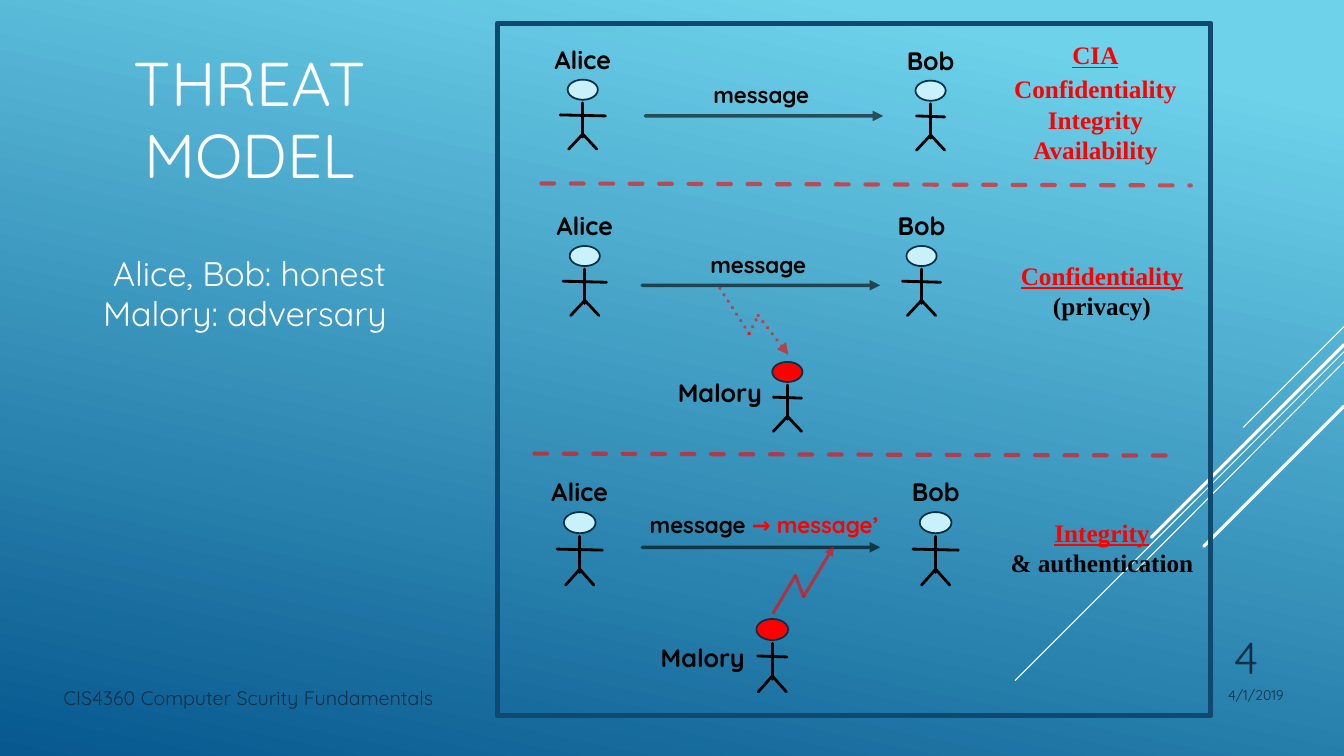
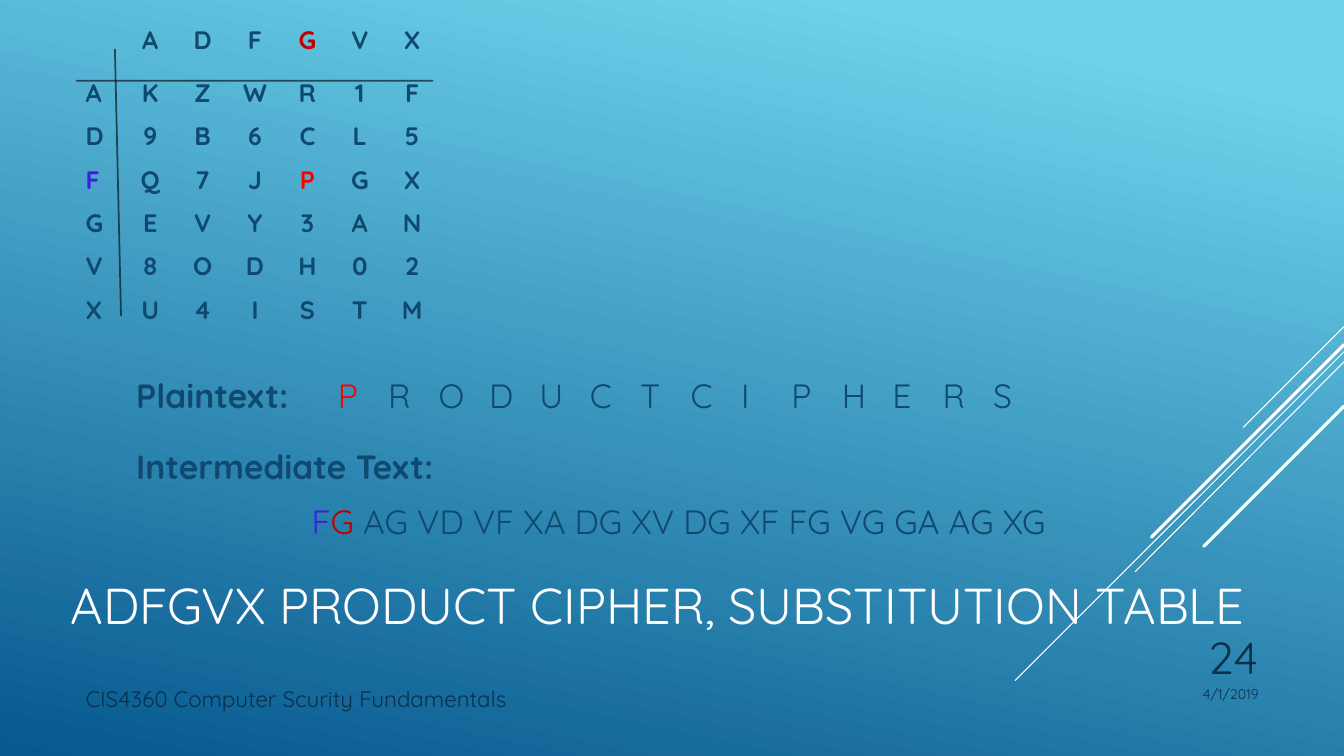
from dataclasses import dataclass, field
from typing import Any, NamedTuple

from lxml.etree import SubElement
from pptx import Presentation
from pptx.dml.color import RGBColor
from pptx.enum.dml import MSO_LINE as Dash
from pptx.enum.shapes import MSO_CONNECTOR as Conn, MSO_SHAPE as Shape
from pptx.enum.text import MSO_ANCHOR as Anchor, MSO_AUTO_SIZE as Fit, PP_ALIGN as Align
from pptx.oxml.ns import qn
from pptx.util import Inches, Pt

Point = tuple[float, float]


@dataclass(frozen=True)
class Theme:
    font: str = "Quicksand"
    serif: str = "Times New Roman"
    white: str = "FFFFFF"
    black: str = "000000"
    navy: str = "0F496F"
    foot: str = "0A304A"
    edge: str = "043148"
    pale: str = "C8F1FB"
    red: str = "FF0000"
    wine: str = "C00000"
    blue: str = "401AE4"
    sky: str = "6ED2EB"
    sea: str = "06588E"
    head: float = 44.1
    title: float = 36
    number: float = 32
    sub: float = 24.3
    body: float = 24
    label: float = 18
    small: float = 16
    date: float = 10


T = Theme()


class Run(NamedTuple):
    text: str
    look: dict[str, Any] = {}


class Para(NamedTuple):
    runs: tuple[Run, ...]
    look: dict[str, Any] = {}
    left: float = 0
    tabs: tuple[float, ...] = ()


class Box(NamedTuple):
    x: float
    y: float
    w: float
    h: float


class Foot(NamedTuple):
    number: str
    date: Box
    course: Box
    size: float


class Note(NamedTuple):
    box: Box
    paras: tuple[Para, ...]
    look: dict[str, Any]


@dataclass(frozen=True)
class Person:
    name: str
    x: float
    y: float
    reach: float
    scale: float = 1
    fill: str = T.pale
    tag: Point = (0, -0.4)


@dataclass(frozen=True)
class Stroke:
    color: str = T.black
    width: float = 2
    alpha: int = 100
    dash: Any = None
    arrow: bool = False


@dataclass(frozen=True)
class Scene:
    """One exchange between Alice and Bob."""
    arrow: Point
    say: Note
    side: Note
    people: tuple[Person, ...]
    zigzag: tuple[Point, ...] = ()
    stroke: Stroke = field(default_factory=Stroke)


def one(text: str, **look: Any) -> Para:
    return Para((Run(text, look),))


def place(shape, box: Box) -> None:
    for key, val in zip(("left", "top", "width", "height"), box):
        setattr(shape, key, Inches(val))


def style(font, look: dict[str, Any]) -> None:
    for key, val in look.items():
        if key == "color":
            font.color.rgb = RGBColor.from_string(val)
        else:
            setattr(font, key, Pt(val) if key == "size" else val)


def write(frame, paras, align=Align.LEFT, anchor=Anchor.TOP, **look: Any) -> None:
    for key, val in dict(word_wrap=True, auto_size=Fit.NONE, vertical_anchor=anchor).items():
        setattr(frame, key, val)
    base = dict(name=T.font, size=T.label, color=T.navy, bold=False) | look
    for i, para in enumerate(paras):
        par = frame.paragraphs[0] if i == 0 else frame.add_paragraph()
        space = dict(alignment=align, space_before=Pt(0), space_after=Pt(0))
        for key, val in (space | para.look).items():
            setattr(par, key, val)
        props = par._p.get_or_add_pPr()
        props.set("marL", str(Inches(para.left)))
        props.set("indent", "0")
        SubElement(props, qn("a:buNone"))
        if para.tabs:
            stops = SubElement(props, qn("a:tabLst"))
            for pos in para.tabs:
                SubElement(stops, qn("a:tab"), pos=str(Inches(pos)), algn="ctr")
        for text, extra in para.runs:
            run = par.add_run()
            run.text = text
            style(run.font, base | extra)


def label(slide, box: Box, paras, **look: Any) -> None:
    write(slide.shapes.add_textbox(*map(Inches, box)).text_frame, paras, **look)


def draw(slide, start: Point, end: Point, stroke: Stroke):
    line = slide.shapes.add_connector(Conn.STRAIGHT, *map(Inches, start + end))
    line.line.width = Pt(stroke.width)
    line.line.color.rgb = RGBColor.from_string(stroke.color)
    if stroke.dash:
        line.line.dash_style = stroke.dash
    props = line.element.spPr
    edge = props.find(qn("a:ln"))
    edge.set("cap", "rnd")
    if stroke.alpha < 100:
        color = edge.find(".//" + qn("a:srgbClr"))
        SubElement(color, qn("a:alpha"), val=str(stroke.alpha * 1000))
    if stroke.arrow:
        SubElement(edge, qn("a:tailEnd"), type="triangle")
    SubElement(props, qn("a:effectLst"))
    return line


def solid(slide, kind, box: Box, fill: str | None, edge: str, width: float) -> None:
    shape = slide.shapes.add_shape(kind, *map(Inches, box))
    shape.shadow.inherit = False
    if fill:
        shape.fill.solid()
        shape.fill.fore_color.rgb = RGBColor.from_string(fill)
    else:
        shape.fill.background()
    shape.line.color.rgb = RGBColor.from_string(edge)
    shape.line.width = Pt(width)


RAYS = (
    ((13.33, 3.24), (12.33, 4.24), 0.75),
    ((13.33, 3.49), (10.07, 6.75), 0.75),
    ((13.33, 3.59), (11.26, 5.67), 0.75),
    ((13.33, 3.42), (11.42, 5.33), 2.25),
    ((13.33, 4.03), (11.94, 5.42), 2.25),
)


def dress(master, slide) -> None:
    """Give the master its gradient and its rays, which are drawn on the slide first."""
    fill = master.background.fill
    fill.gradient()
    fill.gradient_angle = 258
    for stop, color, pos in zip(fill.gradient_stops, (T.sky, T.sea), (0.1, 1)):
        stop.color.rgb = RGBColor.from_string(color)
        stop.position = pos
    for i, (start, end, width) in enumerate(RAYS):
        ray = draw(slide, start, end, Stroke(T.white, width)).element
        ray.nvCxnSpPr.cNvPr.set("id", str(50 + i))
        master.shapes.element.append(ray)


def footer(slide, foot: Foot) -> None:
    look = dict(color=T.foot)
    label(slide, foot.date, [one("4/1/2019")], align=Align.RIGHT, size=T.date, **look)
    label(slide, foot.course, [one("CIS4360 Computer Scurity Fundamentals")],
          size=foot.size, **look)
    label(slide, Box(11.33, 6.1, 1.25, 0.73), [one(foot.number)], align=Align.RIGHT,
          anchor=Anchor.BOTTOM, size=T.number, **look)


def figure(slide, who: Person) -> None:
    x, y, k = who.x, who.y, who.scale
    solid(slide, Shape.OVAL, Box(x - 0.15 * k, y, 0.3 * k, 0.2 * k), who.fill, T.edge, 1.25)
    hip = (x, y + 0.54 * k)
    arm = y + 0.35 * k
    limbs = [((x, y + 0.23 * k), (x, y + 0.57 * k)),
             ((x - who.reach / 2, arm), (x + who.reach / 2, arm + 0.01))]
    limbs += [(hip, (x + side * 0.14, y + 0.69 * k)) for side in (-1, 1)]
    for start, end in limbs:
        draw(slide, start, end, Stroke())
    dx, dy = who.tag
    label(slide, Box(x + dx - 0.7, y + dy, 1.4, 0.4), [one(who.name)],
          align=Align.CENTER, color=T.black, bold=True)


SAY = dict(align=Align.CENTER, size=T.small, color=T.black, bold=True)
SIDE = dict(align=Align.CENTER, name=T.serif, color=T.red, bold=True)
MESSAGE = one("message")
SCENES = (
    Scene((6.4, 1.15), Note(Box(6.84, 0.76, 1.42, 0.37), (MESSAGE,), SAY),
          Note(Box(9.78, 0.34, 2.17, 1.35), (
              Para((Run("CIA", dict(underline=True)),), dict(space_after=Pt(3))),
              one("Confidentiality"), one("Integrity"), one("Availability")), SIDE),
          (Person("Alice", 5.78, 0.79, 0.45), Person("Bob", 9.23, 0.8, 0.28))),
    Scene((6.37, 2.83), Note(Box(6.81, 2.44, 1.42, 0.37), (MESSAGE,), SAY),
          Note(Box(9.91, 2.53, 2.04, 0.71), (
              one("Confidentiality", underline=True), one("(privacy)", color=T.black)), SIDE),
          (Person("Alice", 5.8, 2.44, 0.43), Person("Bob", 9.14, 2.44, 0.38),
           Person("Malory", 7.81, 3.59, 0.28, 1, T.red, (-0.67, 0.1))),
          ((7.14, 2.86), (7.43, 3.31), (7.52, 3.13), (7.82, 3.52)),
          Stroke(T.red, 2.75, 60, Dash.ROUND_DOT)),
    Scene((6.37, 5.43), Note(Box(6.17, 5.02, 2.82, 0.37), (
              Para((Run("message "), Run("→ message’", dict(color=T.red)))),), SAY),
          Note(Box(9.91, 5.08, 2.04, 0.71), (
              one("Integrity", underline=True), one("& authentication", color=T.black)), SIDE),
          (Person("Alice", 5.75, 5.08, 0.45, 1.05), Person("Bob", 9.28, 5.08, 0.45, 1.05),
           Person("Malory", 7.66, 6.14, 0.29, 1.05, T.red, (-0.69, 0.18))),
          ((7.67, 6.08), (7.89, 5.71), (7.97, 5.92), (8.27, 5.42)),
          Stroke(T.red, 2.25, 60)),
)


def act(slide, scene: Scene) -> None:
    for who in scene.people:
        figure(slide, who)
    x, y = scene.arrow
    draw(slide, (x, y), (x + 2.36, y), Stroke(T.black, 2.5, 60, arrow=True))
    for note in (scene.say, scene.side):
        label(slide, note.box, note.paras, **note.look)
    bends = scene.zigzag
    for i, (start, end) in enumerate(zip(bends, bends[1:])):
        kind = scene.stroke
        last = i == len(bends) - 2
        draw(slide, start, end, Stroke(kind.color, kind.width, kind.alpha, kind.dash, last))


def threat(slide) -> None:
    title, body = slide.shapes.title, slide.placeholders[1]
    place(title, Box(0.68, 0.4, 3.6, 1.6))
    place(body, Box(0.1, 2.4, 4.75, 1.05))
    look = dict(align=Align.CENTER, anchor=Anchor.MIDDLE, color=T.white)
    tight = dict(line_spacing=0.97)
    write(title.text_frame, [Para((Run("THREAT MODEL"),), tight)], size=T.head, **look)
    write(body.text_frame, [Para((Run(text),), tight) for text in
                            ("Alice, Bob: honest", "Malory: adversary ")],
          size=T.sub, **look)
    footer(slide, Foot("4", Box(11.08, 6.76, 1.75, 0.4), Box(0.53, 6.76, 4.36, 0.4), 14))
    solid(slide, Shape.RECTANGLE, Box(4.93, 0.23, 7.08, 6.87), None, T.navy, 3.5)
    for scene in SCENES:
        act(slide, scene)
    for start, end in (((5.37, 1.82), (11.81, 1.84)), ((5.3, 4.5), (11.71, 4.52))):
        draw(slide, start, end, Stroke(T.red, 3, 60, Dash.DASH))


GRID = (" ADFGVX", "AKZWR1F", "D9B6CL5", "FQ7JPGX", "GEVY3AN", "V8ODH02", "XU4ISTM")
MARKS = {(0, 4): T.wine, (3, 0): T.blue, (3, 4): T.red}


def square(slide) -> None:
    size = len(GRID)
    table = slide.shapes.add_table(size, size, *map(Inches, (0.75, 0.09, 3.6, 3.2))).table
    table.first_row = table.horz_banding = False
    plain = "{2D5ABB26-0587-4C30-8999-92F81FD0307C}"
    table._tbl.tblPr.find(qn("a:tableStyleId")).text = plain
    for i in range(size):
        table.columns[i].width = Inches(0.52 if i else 0.48)
        table.rows[i].height = Inches(0.43 if i else 0.62)
    for r, row in enumerate(GRID):
        for c, sign in enumerate(row):
            cell = table.cell(r, c)
            cell.fill.background()
            cell.margin_top = cell.margin_bottom = cell.margin_right = 0
            cell.margin_left = 0 if c else Inches(0.1)
            cell.vertical_anchor = Anchor.MIDDLE
            write(cell.text_frame, [one(sign.strip())], Align.CENTER if c else Align.LEFT,
                  Anchor.MIDDLE, bold=True, color=MARKS.get((r, c), T.navy))
    for start, end in (((0.76, 0.8), (4.29, 0.8)), ((1.14, 0.49), (1.2, 3.13))):
        draw(slide, start, end, Stroke(T.black, 1.25, 60))


def cipher(slide) -> None:
    title, body = slide.shapes.title, slide.placeholders[1]
    place(title, Box(0.6, 5.17, 12.45, 1.66))
    write(title.text_frame, [one("ADFGVX PRODUCT CIPHER, SUBSTITUTION TABLE")],
          anchor=Anchor.MIDDLE, size=T.title, color=T.white)
    place(body, Box(1.25, 3.67, 10.25, 1.8))
    bold = dict(bold=True)
    rest = "".join("\t" + sign for sign in "RODUCTCIPHERS")
    write(body.text_frame, [
        Para((Run("Plaintext:\t", bold), Run("P", dict(color=T.red)), Run(rest)),
             tabs=tuple(round(2.47 + 0.56 * i, 2) for i in range(14))),
        Para((Run("Intermediate Text:", bold),), dict(space_before=Pt(22))),
        Para((Run("F", dict(color=T.blue)), Run("G ", dict(color=T.wine)),
              Run("AG VD VF XA DG XV DG XF FG VG GA AG XG")),
             dict(space_before=Pt(10)), left=1.74),
    ], size=T.body)
    footer(slide, Foot("24", Box(10.83, 6.75, 1.75, 0.4), Box(0.75, 6.75, 8.25, 0.4), T.small))
    square(slide)


def main() -> None:
    deck = Presentation()
    deck.slide_width, deck.slide_height = Inches(13.33), Inches(7.5)
    layout = deck.slide_layouts[1]
    first, second = (deck.slides.add_slide(layout) for _ in range(2))
    dress(deck.slide_master, first)
    threat(first)
    cipher(second)
    deck.save("out.pptx")


if __name__ == "__main__":
    main()
